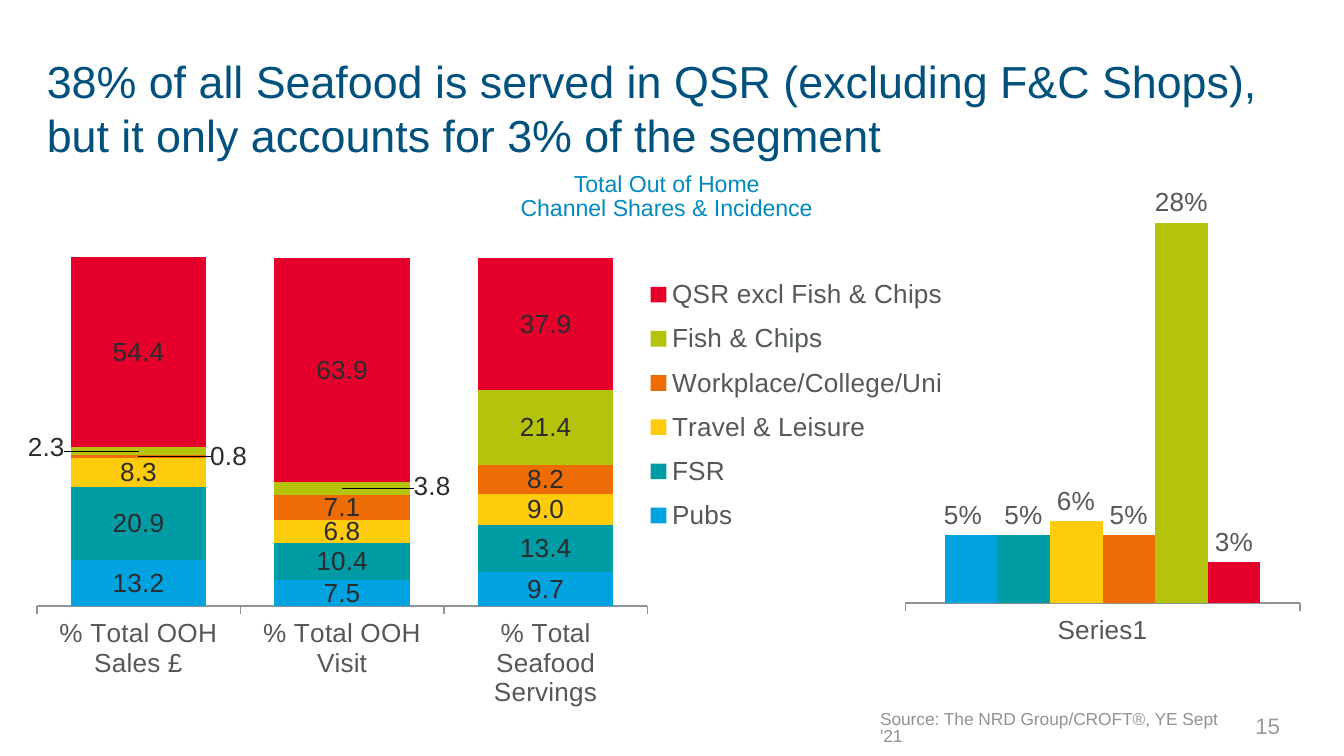
from itertools import cycle

from pptx import Presentation
from pptx.chart.data import CategoryChartData as Data
from pptx.dml.color import RGBColor as RGB
from pptx.enum.chart import XL_CHART_TYPE as Kind
from pptx.enum.chart import XL_LABEL_POSITION as Pos
from pptx.enum.chart import XL_LEGEND_POSITION as Side
from pptx.enum.chart import XL_TICK_LABEL_POSITION as Tick
from pptx.enum.chart import XL_TICK_MARK as Mark
from pptx.enum.text import MSO_ANCHOR as Anchor
from pptx.enum.text import PP_ALIGN as Align
from pptx.oxml import parse_xml
from pptx.oxml.ns import nsdecls, qn
from pptx.util import Pt

FONT = "Arial"
HEX = {
    "title": "00517D", "sub": "008AC0", "page": "999A9B", "note": "8E9396",
    "text": "54585A", "dark": "2A2C2D", "axis": "8E9396",
    "pub": "00A3E0", "fsr": "009CA6", "trip": "FECC0C",
    "work": "ED6C05", "fish": "B6C30C", "qsr": "E4002B",
}

TEXTS = [
    (["38% of all Seafood is served in QSR (excluding F&C Shops), "
      "but it only accounts for 3% of the segment"],
     dict(box=(18, 39.2, 679, 36.7), size=24, color="title", anchor=Anchor.MIDDLE)),
    (["Total Out of Home", "Channel Shares & Incidence"],
     dict(box=(24.2, 91.4, 666, 32.4), size=12.4, color="sub",
          align=Align.CENTER, line=0.7, before=2.5)),
    (["15"],
     dict(box=(649.7, 377.5, 43.2, 22.3), size=12, color="page",
          align=Align.RIGHT, anchor=Anchor.MIDDLE)),
    (["Source: The NRD Group/CROFT®, YE Sept '21"],
     dict(box=(464.4, 378, 205, 21.6), size=9.3, color="note", line=0.8, before=1.9)),
]

SHARES = dict(
    kind=Kind.COLUMN_STACKED, box=(5.8, 100.1, 513.7, 299.5),
    plot=(13.9, 0, 327.2, 299.5), key=(339, 42, 164, 150),
    cats=["% Total OOH Sales £", "% Total OOH Visit", "% Total Seafood Servings"],
    rows=[
        ("Pubs", "pub", [13.2, 7.5, 9.7]),
        ("FSR", "fsr", [20.9, 10.4, 13.4]),
        ("Travel & Leisure", "trip", [8.3, 6.8, 9.0]),
        ("Workplace/College/Uni", "work", [0.8, 7.1, 8.2]),
        ("Fish & Chips", "fish", [2.3, 3.8, 21.4]),
        ("QSR excl Fish & Chips", "qsr", [54.4, 63.9, 37.9]),
    ],
    low=-40, high=120, gap=50, lap=100, form="#,##0.0",
    ink="dark", pos=Pos.CENTER,
    moves=[(3, 0, 48.3, 0), (4, 0, -49.4, -1.9), (4, 1, 48.3, -1)],
)
RATES = dict(
    kind=Kind.COLUMN_CLUSTERED, box=(474, 92.4, 233.3, 272.2),
    plot=(11, 12.3, 211.4, 218.3), key=None,
    cats=["Series1"],
    rows=[
        ("Series 1", "pub", [0.05]),
        ("Series 2", "fsr", [0.05]),
        ("Series 3", "trip", [0.06]),
        ("Series 4", "work", [0.05]),
        ("Series 5", "fish", [0.28]),
        ("Series 6", "qsr", [0.03]),
    ],
    low=0, high=0.3, gap=150, lap=0, form="0%",
    ink="text", pos=Pos.OUTSIDE_END,
    moves=[(0, 0, -4.2, 0)],
)


def rgb(name):
    return RGB.from_string(HEX[name])


def style(font, size, color):
    font.name, font.size, font.color.rgb = FONT, Pt(size), rgb(color)


def write(slide, lines, box, size, color, align=Align.LEFT,
          anchor=Anchor.TOP, line=None, before=0):
    frame = slide.shapes.add_textbox(*map(Pt, box)).text_frame
    frame.word_wrap = True
    frame.vertical_anchor = anchor
    frame.text = "\n".join(lines)
    for para in frame.paragraphs:
        para.alignment = align
        para.line_spacing = line
        para.space_before = Pt(before)
        style(para.runs[0].font, size, color)


def place(node, spot, vals, area, modes=""):
    for old in node.findall(qn("c:layout")):
        node.remove(old)
    tags = "".join(f'<c:{t} val="{v / full:.4f}"/>'
                   for t, v, full in zip("xywh", vals, cycle(area)))
    node.insert(spot, parse_xml(
        f'<c:layout {nsdecls("c")}><c:manualLayout>{modes}{tags}'
        "</c:manualLayout></c:layout>"))


def shift(point, x, y, area, form, ink, pos):
    label = point.data_label
    style(label.font, 14, ink)
    label.position = pos
    node = label.font._element.getparent().getparent().getparent().getparent()
    place(node, 1, (x, y), area)
    node.insert(2, parse_xml(
        f'<c:numFmt {nsdecls("c")} formatCode="{form}" sourceLinked="0"/>'))


def unlead(tags):
    tags._element.append(parse_xml(
        f'<c:extLst {nsdecls("c")}>'
        '<c:ext uri="{CE6537A1-D6FC-4f65-9D91-7224C49458BB}" '
        'xmlns:c15="http://schemas.microsoft.com/office/drawing/2012/chart">'
        '<c15:showLeaderLines val="0"/></c:ext></c:extLst>'))


def draw(slide, kind, box, plot, key, cats, rows, low, high, gap, lap,
         form, ink, pos, moves):
    area = box[2:]
    data = Data()
    data.categories = cats
    for name, _, vals in rows:
        data.add_series(name, vals)
    chart = slide.shapes.add_chart(kind, *map(Pt, box), data).chart
    style(chart.font, 14, "text")
    chart.has_title = False
    edge = '<c:xMode val="edge"/><c:yMode val="edge"/>'
    bars = chart.plots[0]
    bars.gap_width, bars.overlap, bars.vary_by_categories = gap, lap, False
    place(bars._element.getparent(), 0, plot, area,
          '<c:layoutTarget val="inner"/>' + edge)

    chart.has_legend = key is not None
    if key:
        chart.legend.position = Side.RIGHT
        chart.legend.include_in_layout = False
        place(chart.legend._element, 1, key, area, edge)

    scale, axis = chart.value_axis, chart.category_axis
    scale.minimum_scale, scale.maximum_scale = low, high
    scale.has_major_gridlines = scale.visible = False
    axis.major_tick_mark = Mark.OUTSIDE
    axis.tick_label_position = Tick.NEXT_TO_AXIS
    axis.format.line.color.rgb = rgb("axis")

    for part, (_, color, _) in zip(bars.series, rows):
        part.format.fill.solid()
        part.format.fill.fore_color.rgb = rgb(color)
        part.invert_if_negative = False
        tags = part.data_labels
        tags.show_value = True
        tags.number_format, tags.number_format_is_linked = form, False
        tags.position = pos
        style(tags.font, 14, ink)
        unlead(tags)
    for row, col, x, y in moves:
        shift(bars.series[row].points[col], x, y, area, form, ink, pos)


def main():
    deck = Presentation()
    deck.slide_width, deck.slide_height = Pt(720), Pt(405)
    slide = deck.slides.add_slide(deck.slide_layouts[6])
    for lines, form in TEXTS:
        write(slide, lines, **form)
    for chart in (SHARES, RATES):
        draw(slide, **chart)
    deck.save("out.pptx")


if __name__ == "__main__":
    main()
